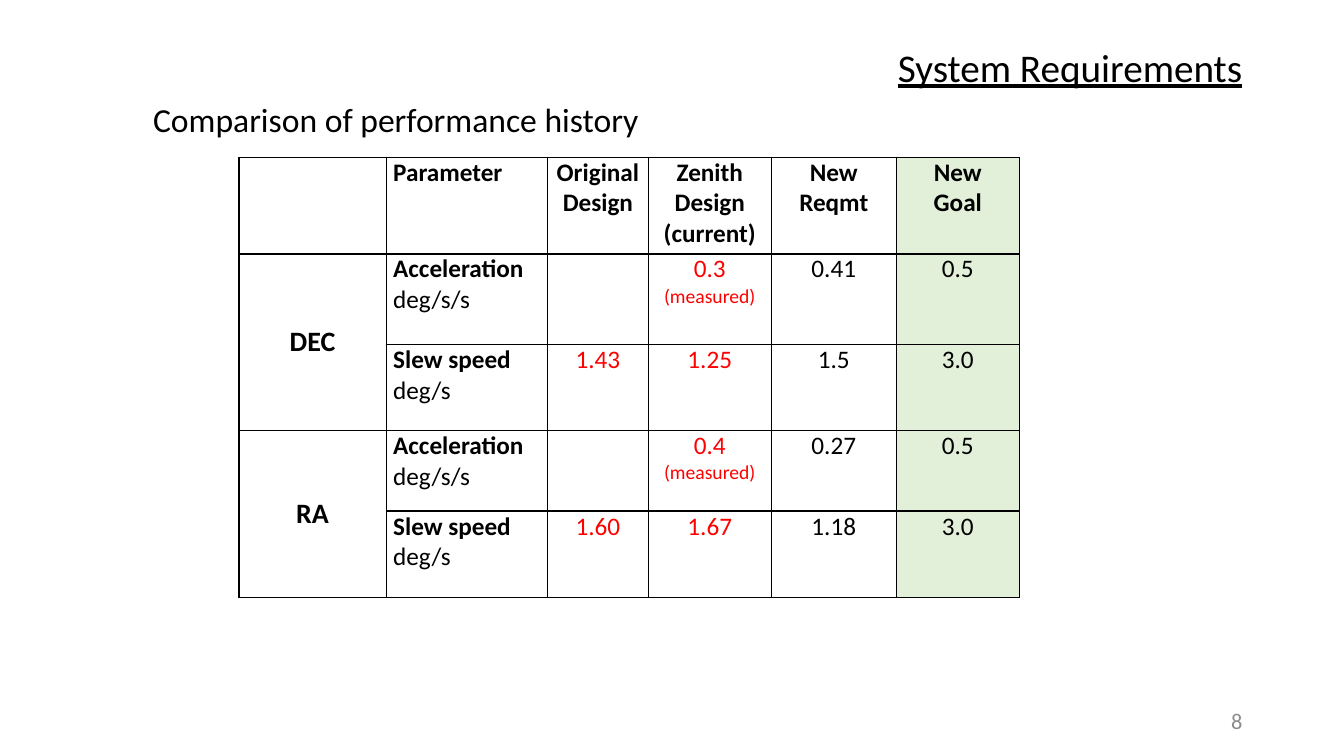
from lxml.etree import SubElement
from pptx import Presentation
from pptx.dml.color import RGBColor
from pptx.enum.text import MSO_ANCHOR, PP_ALIGN
from pptx.oxml.ns import qn
from pptx.util import Inches, Pt

BLACK, RED, GREY, GOAL_GREEN = "000000", "FF0000", "8C8C8C", "E2F0D9"
COLUMN_WIDTHS = [1.46, 1.6, 1, 1.22, 1.24, 1.22]
ROW_HEIGHTS = [0.96, 0.9, 0.85, 0.8, 0.86]
HEADINGS = ["", "Parameter", "Original Design", "Zenith Design\n(current)",
            "New\nReqmt", "New\nGoal"]
ACCELERATION, SLEW_SPEED = "Acceleration\ndeg/s/s", "Slew speed\ndeg/s"
REQUIREMENTS = [
    ["DEC", ACCELERATION, "", "0.3\n(measured)", "0.41", "0.5"],
    ["", SLEW_SPEED, "1.43", "1.25", "1.5", "3.0"],
    ["RA", ACCELERATION, "", "0.4\n(measured)", "0.27", "0.5"],
    ["", SLEW_SPEED, "1.60", "1.67", "1.18", "3.0"],
]
AXIS, PARAMETER, ORIGINAL, CURRENT, REQMT, GOAL = range(6)


def rgb(color):
    return RGBColor.from_string(color)


def add_text(frame, text, size=18, color=BLACK, bold=False, underline=False,
             align=PP_ALIGN.LEFT, spacing=None, detail=None):
    for index, line in enumerate(text.split("\n")):
        paragraph = frame.add_paragraph() if index else frame.paragraphs[0]
        paragraph.alignment = align
        paragraph.line_spacing = spacing
        run = paragraph.add_run()
        run.text = line
        style = {"size": size, "bold": bold}
        if index and detail:
            style.update(detail)
        run.font.name = "Calibri"
        run.font.size = Pt(style["size"])
        run.font.bold = style["bold"]
        run.font.underline = underline
        run.font.color.rgb = rgb(color)


class RequirementsSlide:
    def __init__(self, presentation):
        self.slide = presentation.slides.add_slide(presentation.slide_layouts[5])

    def title(self, text, box, **style):
        heading = self.slide.shapes.title
        heading.left, heading.top, heading.width, heading.height = map(Inches, box)
        heading.text_frame.word_wrap = True
        heading.text_frame.vertical_anchor = MSO_ANCHOR.MIDDLE
        add_text(heading.text_frame, text, **style)

    def text(self, text, box, anchor=MSO_ANCHOR.TOP, **style):
        frame = self.slide.shapes.add_textbox(*map(Inches, box)).text_frame
        frame.word_wrap = True
        frame.vertical_anchor = anchor
        add_text(frame, text, **style)

    def table(self, left, top, rows):
        box = (left, top, sum(COLUMN_WIDTHS), sum(ROW_HEIGHTS))
        table = self.slide.shapes.add_table(
            len(rows), len(COLUMN_WIDTHS), *map(Inches, box)).table
        table.first_row = table.horz_banding = False
        for column, width in zip(table.columns, COLUMN_WIDTHS):
            column.width = Inches(width)
        for row, height in zip(table.rows, ROW_HEIGHTS):
            row.height = Inches(height)
        for r, values in enumerate(rows):
            for c, value in enumerate(values):
                self.cell(table.cell(r, c), value, r, c)
        for first in (1, 3):
            table.cell(first, AXIS).merge(table.cell(first + 1, AXIS))

    def cell(self, cell, value, row, column):
        cell.margin_left = cell.margin_right = Inches(0.07)
        cell.margin_top = cell.margin_bottom = 0
        self.borders(cell)
        if column == GOAL:
            cell.fill.solid()
            cell.fill.fore_color.rgb = rgb(GOAL_GREEN)
        else:
            cell.fill.background()
        if column == AXIS:
            cell.vertical_anchor = MSO_ANCHOR.MIDDLE
        if not value:
            return
        measured = row > 0 and column in (ORIGINAL, CURRENT)
        detail = None
        if row and column == PARAMETER:
            detail = {"bold": False}
        elif measured:
            detail = {"size": 14}
        add_text(cell.text_frame, value,
                 size=20 if column == AXIS else 18,
                 color=RED if measured else BLACK,
                 bold=row == 0 or column in (AXIS, PARAMETER),
                 align=PP_ALIGN.LEFT if column == PARAMETER else PP_ALIGN.CENTER,
                 detail=detail)

    def borders(self, cell):
        properties = cell._tc.get_or_add_tcPr()
        for side in ("a:lnL", "a:lnR", "a:lnT", "a:lnB"):
            line = SubElement(properties, qn(side), w=str(Pt(1)))
            fill = SubElement(line, qn("a:solidFill"))
            SubElement(fill, qn("a:srgbClr"), val=BLACK)


def main():
    presentation = Presentation()
    presentation.slide_width = Inches(13.33)
    presentation.slide_height = Inches(7.5)
    page = RequirementsSlide(presentation)
    page.title("System Requirements", (0.92, 0.4, 11.5, 0.58), size=28,
               underline=True, align=PP_ALIGN.RIGHT, spacing=0.9)
    page.text("Comparison of performance history", (1.42, 0.98, 11, 0.5),
              size=24, spacing=0.9)
    page.table(2.37, 1.56, [HEADINGS] + REQUIREMENTS)
    page.text("8", (9.42, 6.95, 3, 0.4), anchor=MSO_ANCHOR.MIDDLE, size=16,
              color=GREY, align=PP_ALIGN.RIGHT)
    presentation.save("out.pptx")


if __name__ == "__main__":
    main()
